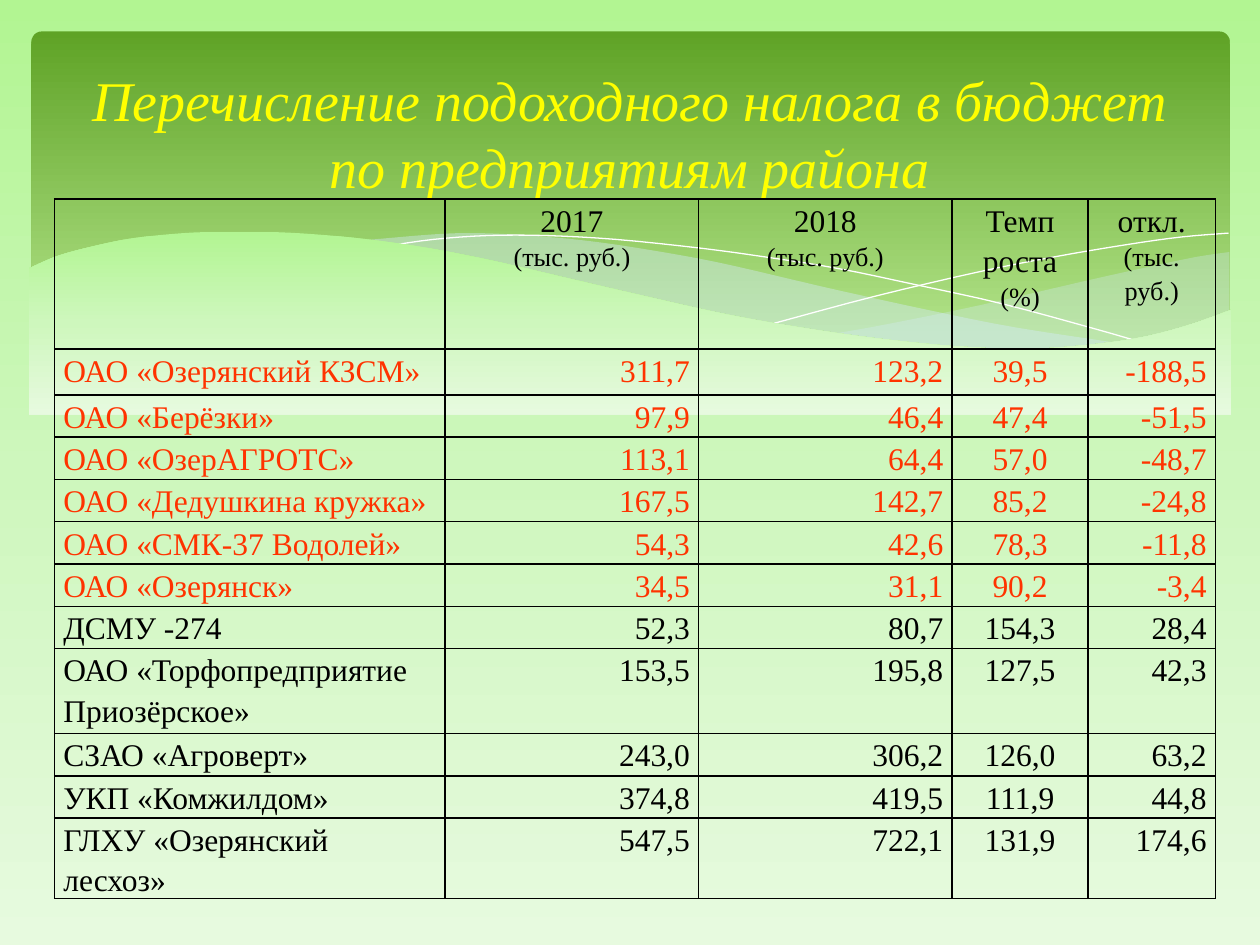
"""Build the slide on income tax paid to the budget by district enterprises."""
from copy import deepcopy
from dataclasses import dataclass
from typing import Optional

from lxml.etree import SubElement
from pptx import Presentation
from pptx.dml.color import RGBColor
from pptx.enum.shapes import MSO_SHAPE
from pptx.enum.text import MSO_ANCHOR, PP_ALIGN
from pptx.oxml.ns import qn
from pptx.util import Pt

COLORS = {
    "sky_top": "B2F592", "sky_middle": "CEF7BD", "sky_bottom": "E7FADF",
    "band_top": "5FA326", "band_bottom": "B2E389", "mist": "D6ECFF",
    "white": "FFFFFF", "title": "FFFF00", "decline": "FF3300", "text": "000000",
}
SKY = [(0, "sky_top"), (50, "sky_middle"), (100, "sky_bottom")]
BAND = [(0, "band_top"), (90, "band_bottom")]
FONT = {"name": "Times New Roman"}
TITLE_FONT = {**FONT, "size": Pt(32), "italic": True}
TITLE_BOX = {"left": Pt(36), "top": Pt(26.6), "width": Pt(648), "height": Pt(98.6)}
CELL_FORMAT = {"margin_left": Pt(5), "margin_right": Pt(5), "margin_top": 0, "margin_bottom": 0}
COLUMN_WIDTHS = [223.2, 144.8, 144.8, 77.8, 72.7]
ALIGNMENTS = [PP_ALIGN.LEFT, PP_ALIGN.RIGHT, PP_ALIGN.RIGHT, PP_ALIGN.CENTER, PP_ALIGN.RIGHT]
ROW_HEIGHTS = [85.7, 26.1] + [24.2] * 6 + [48.5] + [24.2] * 2 + [19.4]

HEADERS = [
    [],
    [[("2017", 18)], [("(тыс. руб.)", 15)]],
    [[("2018", 18)], [("(тыс. руб.)", 15)]],
    [[("Темп", 18)], [("роста ", 18), ("(%)", 15)]],
    [[("откл.", 18)], [("(тыс. руб.)", 15)]],
]


@dataclass
class Enterprise:
    """Tax figures of one enterprise."""
    name: str
    paid_2017: str
    paid_2018: str
    growth: str
    change: str

    def texts(self) -> list:
        """Return the row in column order."""
        return [self.name, self.paid_2017, self.paid_2018, self.growth, self.change]


@dataclass
class Wave:
    """Decorative outline: smooth edges, then straight corners."""
    edges: list
    corners: tuple = ()
    opacity: Optional[int] = None
    gradient: Optional[list] = None


ENTERPRISES = [
    Enterprise("ОАО «Озерянский КЗСМ»", "311,7", "123,2", "39,5", "-188,5"),
    Enterprise("ОАО «Берёзки»", "97,9", "46,4", "47,4", "-51,5"),
    Enterprise("ОАО «ОзерАГРОТС»", "113,1", "64,4", "57,0", "-48,7"),
    Enterprise("ОАО «Дедушкина кружка»", "167,5", "142,7", "85,2", "-24,8"),
    Enterprise("ОАО «СМК-37 Водолей»", "54,3", "42,6", "78,3", "-11,8"),
    Enterprise("ОАО «Озерянск»", "34,5", "31,1", "90,2", "-3,4"),
    Enterprise("ДСМУ -274", "52,3", "80,7", "154,3", "28,4"),
    Enterprise("ОАО «Торфопредприятие Приозёрское»", "153,5", "195,8", "127,5", "42,3"),
    Enterprise("СЗАО «Агроверт»", "243,0", "306,2", "126,0", "63,2"),
    Enterprise("УКП «Комжилдом»", "374,8", "419,5", "111,9", "44,8"),
    Enterprise("ГЛХУ «Озерянский лесхоз»", "547,5", "722,1", "131,9", "174,6"),
]

WAVES = [
    Wave([[(702.5, 144), (682.6, 147), (652.3, 153.4), (619.9, 160.6), (560.9, 174.2),
           (508.3, 185), (475.9, 190.8)],
          [(475.9, 190.8), (507.6, 195.1), (536.4, 198), (578.2, 200.2), (614.9, 198.7),
           (645.8, 194.4), (673.2, 188.6), (702.5, 177.8)]], opacity=29),
    Wave([[(643, 196.6), (581, 187.2), (533.5, 177.8), (481, 166.3), (452.9, 159.8),
           (409.7, 149.8), (370.1, 142.6), (334.8, 137.5), (302.4, 134.6), (273.6, 133.2),
           (247.7, 133.9), (205.9, 137.5)],
          [(205.9, 137.5), (246.2, 143.3), (290.9, 151.9), (323.3, 159.8), (381.6, 172.8),
           (432.7, 183.6), (478.8, 191.5), (519.8, 197.3), (556.6, 199.4), (589, 200.2),
           (617, 199.4), (643, 196.6)]], opacity=40),
    Wave([[(222.5, 140.4), (247.7, 136.8), (278.6, 134.6), (311.8, 134.6), (352.1, 136.8),
           (400.3, 141.8), (437.8, 146.9), (478.8, 153.4), (523.4, 162.7), (572.4, 173.5),
           (625.7, 187.9), (653, 195.8)]]),
    Wave([[(441.4, 185), (500.4, 169.2), (558.7, 155.5), (601.9, 146.9), (644.4, 139.7),
           (675.4, 135.4), (702, 133.2)]]),
    Wave([[(703.4, 177.1), (676.8, 186.5), (647.3, 193.7), (612, 198), (582.5, 199.4),
           (547.9, 198), (509.8, 194.4), (466.6, 188.6), (416.9, 180), (362.2, 167.8),
           (321.8, 158.4), (281.5, 149), (244.8, 141.8), (210.2, 136.8), (180, 133.9),
           (151.9, 132.5), (127.4, 132.5), (105.1, 133.2), (76.3, 136.1), (54.7, 140.4),
           (33.1, 146.2), (16.6, 153.4)]],
         corners=((16.6, 236.9), (703.4, 236.9)), gradient=SKY),
]


def apply(target, values: dict) -> None:
    """Set each named attribute on the target."""
    for name, value in values.items():
        setattr(target, name, value)


def rgb(color: str) -> RGBColor:
    """Look up a palette colour."""
    return RGBColor.from_string(COLORS[color])


def fill_gradient(fill, element, stops: list) -> None:
    """Fill from top to bottom through the given stops."""
    fill.gradient()
    fill.gradient_angle = 270
    stop_list = next(element.iter(qn("a:gsLst")))
    while len(stop_list) < len(stops):
        stop_list.append(deepcopy(stop_list[0]))
    for stop, (position, color) in zip(fill.gradient_stops, stops):
        stop.position = position / 100
        stop.color.rgb = rgb(color)


def smooth(knots: list, steps: int = 4) -> list:
    """Run a Catmull-Rom curve through the knots."""
    padded = [knots[0], *knots, knots[-1]]
    curve = [knots[0]]
    for a, b, c, d in zip(padded, padded[1:], padded[2:], padded[3:]):
        for t in (step / steps for step in range(1, steps + 1)):
            curve.append(tuple(
                (2 * q + (r - p) * t + (2 * p - 5 * q + 4 * r - s) * t ** 2
                 + (3 * q - p - 3 * r + s) * t ** 3) / 2
                for p, q, r, s in zip(a, b, c, d)))
    return curve


def draw_wave(shapes, wave: Wave) -> None:
    """Draw one wave as a tinted area, a gradient area or a thin line."""
    outline = [point for edge in wave.edges for point in smooth(edge)] + list(wave.corners)
    start, *rest = [(Pt(x), Pt(y)) for x, y in outline]
    builder = shapes.build_freeform(*start)
    builder.add_line_segments(rest, close=bool(wave.opacity or wave.gradient))
    shape = builder.convert_to_shape()
    shape.shadow.inherit = False
    shape.line.fill.background()
    if wave.gradient:
        fill_gradient(shape.fill, shape.element, wave.gradient)
    elif wave.opacity:
        shape.fill.solid()
        shape.fill.fore_color.rgb = rgb("mist")
        tint = next(shape.element.spPr.iter(qn("a:srgbClr")))
        SubElement(tint, qn("a:alpha"), val=str(wave.opacity * 1000))
    else:
        shape.fill.background()
        shape.line.color.rgb = rgb("white")
        shape.line.width = Pt(0)


def format_cell(cell, paragraphs: list, alignment, color: str) -> None:
    """Write paragraphs of (text, size) runs into a bordered clear cell."""
    apply(cell, CELL_FORMAT)
    for side in ("lnL", "lnR", "lnT", "lnB"):
        border = SubElement(cell._tc.get_or_add_tcPr(), qn(f"a:{side}"), w=str(Pt(1)))
        SubElement(SubElement(border, qn("a:solidFill")), qn("a:srgbClr"), val=COLORS["text"])
    cell.fill.background()
    for index, runs in enumerate(paragraphs):
        frame = cell.text_frame
        paragraph = frame.add_paragraph() if index else frame.paragraphs[0]
        apply(paragraph, {"alignment": alignment, "line_spacing": 1.15})
        for text, size in runs:
            run = paragraph.add_run()
            run.text = text
            apply(run.font, {**FONT, "size": Pt(size)})
            run.font.color.rgb = rgb(color)


def draw_tax_table(shapes) -> None:
    """Draw the enterprise table, with falling payments in red."""
    taxes = shapes.add_table(len(ROW_HEIGHTS), len(COLUMN_WIDTHS), Pt(31.2), Pt(113.8),
                             Pt(sum(COLUMN_WIDTHS)), Pt(sum(ROW_HEIGHTS))).table
    apply(taxes, {"first_row": False, "horz_banding": False})
    for column, width in zip(taxes.columns, COLUMN_WIDTHS):
        column.width = Pt(width)
    for row, height in zip(taxes.rows, ROW_HEIGHTS):
        row.height = Pt(height)
    for column, header in enumerate(HEADERS):
        format_cell(taxes.cell(0, column), header, PP_ALIGN.CENTER, "text")
    for row, enterprise in enumerate(ENTERPRISES, 1):
        color = "decline" if enterprise.change.startswith("-") else "text"
        for column, text in enumerate(enterprise.texts()):
            format_cell(taxes.cell(row, column), [[(text, 18)]], ALIGNMENTS[column], color)


def main() -> None:
    """Assemble and save the slide."""
    deck = Presentation()
    apply(deck, {"slide_width": Pt(720), "slide_height": Pt(540)})
    slide = deck.slides.add_slide(deck.slide_layouts[5])
    fill_gradient(slide.background.fill, slide.element, SKY)

    band = slide.shapes.add_shape(MSO_SHAPE.ROUNDED_RECTANGLE, Pt(18), Pt(18), Pt(684.7), Pt(194.4))
    band.adjustments[0] = 0.03
    band.shadow.inherit = False
    band.line.fill.background()
    fill_gradient(band.fill, band.element, BAND)
    for wave in WAVES:
        draw_wave(slide.shapes, wave)

    title = slide.shapes.title
    title.element.getparent().append(title.element)
    apply(title, TITLE_BOX)
    title.text_frame.text = "Перечисление подоходного налога в бюджет по предприятиям района"
    title.text_frame.vertical_anchor = MSO_ANCHOR.MIDDLE
    heading = title.text_frame.paragraphs[0]
    heading.alignment = PP_ALIGN.CENTER
    apply(heading.runs[0].font, TITLE_FONT)
    heading.runs[0].font.color.rgb = rgb("title")

    draw_tax_table(slide.shapes)
    deck.save("out.pptx")


if __name__ == "__main__":
    main()
